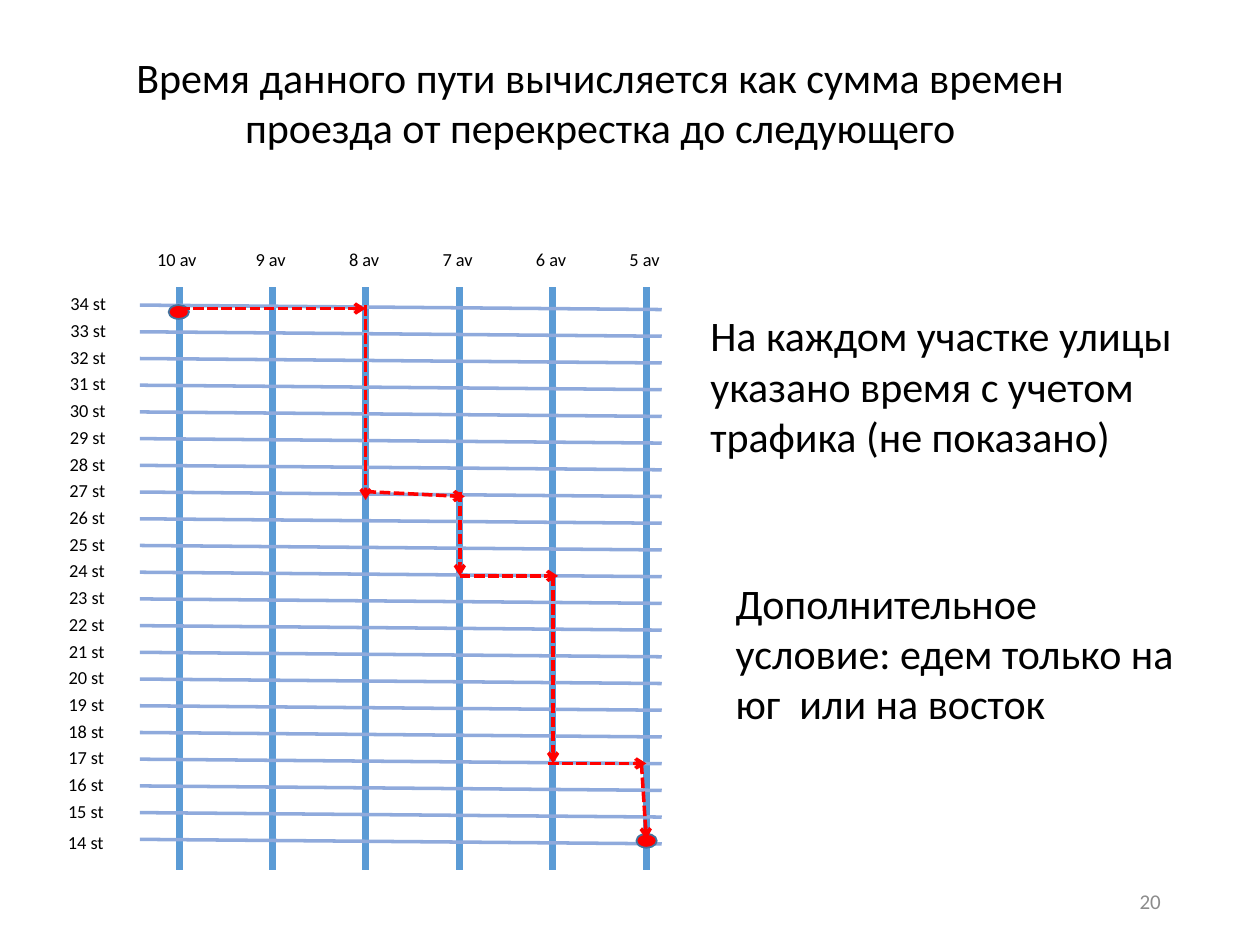
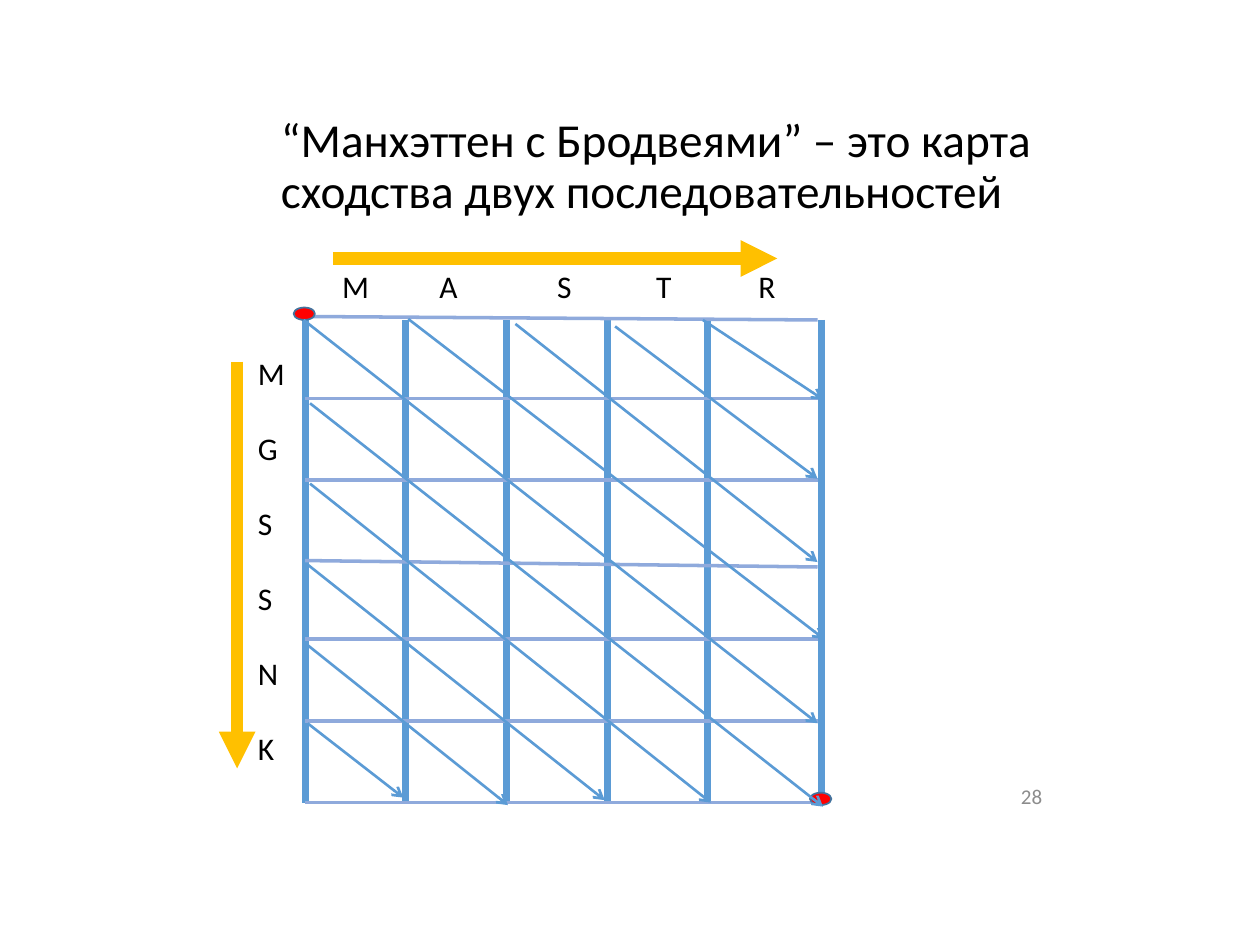
"""Build two slides that show street grids with routes through them."""
import pptx
import pptx.dml.color
import pptx.enum.dml
import pptx.enum.shapes
import pptx.enum.text
import pptx.oxml
import pptx.oxml.ns
import pptx.util

Cm, Pt = pptx.util.Cm, pptx.util.Pt
ALIGN = pptx.enum.text.PP_ALIGN
ANCHOR = pptx.enum.text.MSO_ANCHOR
FONT = "Calibri"
COLORS = {
    "text": "000000",
    "number": "8C8C8C",
    "avenue": "5B9BD5",
    "street": "8FAADC",
    "route": "FF0000",
    "outline": "43739E",
    "direction": "FFC000",
}
ROUTE = [
    (11.05, 15.39, 13.03, 15.39),
    (12.93, 15.39, 13.03, 16.92),
    (9.27, 11.61, 11.25, 11.61),
    (11.15, 11.61, 11.15, 15.39),
    (9.27, 9.91, 9.27, 11.61),
    (7.37, 9.91, 9.37, 10.01),
    (7.37, 6.15, 7.37, 10.08),
    (3.61, 6.22, 7.37, 6.22),
]
DIAGONALS = [
    (6.12, 6.45, 16.48, 14.58),
    (6.25, 8.13, 16.59, 16.26),
    (6.25, 9.75, 14.33, 16.18),
    (6.2, 11.38, 12.19, 16.13),
    (10.39, 6.53, 16.48, 11.33),
    (6.17, 12.98, 10.24, 16.23),
    (12.4, 6.58, 16.48, 9.65),
    (14.17, 6.45, 16.59, 8.05),
    (6.2, 14.58, 8.13, 16.08),
    (8.23, 6.43, 16.61, 12.88),
]


def rgb(name):
    return pptx.dml.color.RGBColor.from_string(COLORS[name])


def add_xml(parent, tag, **attrs):
    child = pptx.oxml.parse_xml(f"<a:{tag} {pptx.oxml.ns.nsdecls('a')}/>")
    for key, value in attrs.items():
        child.set(key, str(value))
    parent.append(child)
    return child


def format_paragraph(p, size, color="text", align=ALIGN.LEFT):
    p.alignment = align
    p.font.name = FONT
    p.font.size = Pt(size)
    p.font.color.rgb = rgb(color)


def add_text(slide, box, text, size, color="text", align=ALIGN.LEFT,
             anchor=ANCHOR.TOP, wrap=True):
    sp = slide.shapes.add_textbox(*map(Cm, box))
    tf = sp.text_frame
    tf.word_wrap = wrap
    tf.vertical_anchor = anchor
    tf.text = text
    for p in tf.paragraphs:
        format_paragraph(p, size, color, align)
    return tf


def add_title(slide, box, text, size, align, anchor, spacing):
    sp = slide.shapes.title
    sp.left, sp.top, sp.width, sp.height = map(Cm, box)
    tf = sp.text_frame
    tf.text = text
    tf.word_wrap = True
    tf.auto_size = pptx.enum.text.MSO_AUTO_SIZE.NONE
    tf.vertical_anchor = anchor
    p = tf.paragraphs[0]
    p.line_spacing = spacing
    format_paragraph(p, size, align=align)


def add_number(slide, box, number):
    add_text(slide, box, number, 12, "number", ALIGN.RIGHT, ANCHOR.MIDDLE)


def add_line(slide, ends, color, width, dashed=False, head=None):
    line = slide.shapes.add_connector(
        pptx.enum.shapes.MSO_CONNECTOR.STRAIGHT, *map(Cm, ends))
    line.line.color.rgb = rgb(color)
    line.line.width = Pt(width)
    if dashed:
        line.line.dash_style = pptx.enum.dml.MSO_LINE.SQUARE_DOT
    if head:
        add_xml(line.line._get_or_add_ln(), "tailEnd", type=head)
    add_xml(line._element.spPr, "effectLst")


def add_stop(slide, left, top, width, height):
    sp = slide.shapes.add_shape(
        pptx.enum.shapes.MSO_SHAPE.OVAL, *map(Cm, (left, top, width, height)))
    sp.shadow.inherit = False
    sp.fill.solid()
    sp.fill.fore_color.rgb = rgb("route")
    sp.line.color.rgb = rgb("outline")
    sp.line.width = Pt(1)


def add_tabs(p, positions):
    pPr = p._p.get_or_add_pPr()
    tabs = add_xml(pPr, "tabLst")
    for position in positions:
        add_xml(tabs, "tab", pos=Cm(position), algn="l")
    pPr.insert(0, tabs)


def build_street_map(slide):
    add_title(slide, (1.85, 0.91, 20.5, 2.31),
              "Время данного пути вычисляется как сумма времен проезда "
              "от перекрестка до следующего", 24, ALIGN.CENTER, ANCHOR.TOP, 1.0)
    avenue_gap = (13.03 - 3.61) / 5
    street_gap = (16.92 - 6.15) / 20
    for i in range(6):
        x = 3.61 + i * avenue_gap
        label = f"{10 - i} av"
        add_line(slide, (x, 5.79, x, 17.53), "avenue", 4)
        add_text(slide, (x - 0.19 - 0.1 * len(label), 4.88,
                         0.4 + 0.25 * len(label), 0.79),
                 label, 10.5, wrap=False)
    for i in range(21):
        y = 6.15 + i * street_gap
        label_top = y - 0.38 + (0.1 if i == 20 else 0)
        add_line(slide, (2.82, y, 13.34, y + 0.09), "street", 2)
        add_text(slide, (1.17 - 0.05 * i / 20, label_top, 1.55, 0.79),
                 f"{34 - i} st", 10.5, wrap=False)
    add_stop(slide, 3.4, 6.15, 0.41, 0.28)
    add_stop(slide, 12.83, 16.81, 0.41, 0.28)
    for ends in ROUTE:
        add_line(slide, ends, "route", 2, dashed=True, head="arrow")
    add_text(slide, (14.07, 6.12, 10.57, 3.33),
             "На каждом участке улицы указано время с учетом трафика "
             "(не показано)", 24)
    add_text(slide, (14.58, 11.51, 9.78, 3.33),
             "Дополнительное условие: едем только на юг  или на восток", 24)
    add_number(slide, (17.93, 17.65, 5.72, 1.02), "20")


def build_similarity_map(slide):
    add_title(slide, (5.41, 2.18, 15.88, 2.39),
              "“Манхэттен с Бродвеями” – это карта сходства двух "
              "последовательностей", 27, ALIGN.LEFT, ANCHOR.MIDDLE, 0.9)
    add_number(slide, (16.81, 15.67, 4.45, 0.76), "28")
    for x in [6.15 + 2.03 * i for i in range(5)]:
        add_line(slide, (x, 6.45, x, 16.18), "avenue", 4)
    add_line(slide, (16.56, 6.45, 16.56, 15.98), "avenue", 4)
    for y, drop in ((6.38, 0.07), (8.03, 0), (9.68, 0), (11.3, 0.13),
                    (12.88, 0), (14.53, 0), (16.18, 0)):
        add_line(slide, (6.15, y, 16.48, y + drop), "street", 2)
    add_stop(slide, 5.92, 6.2, 0.43, 0.25)
    add_stop(slide, 16.33, 15.98, 0.43, 0.25)
    tf = add_text(slide, (6.65, 5.26, 9.45, 1.02), "\t".join("MASTR"), 18)
    add_tabs(tf.paragraphs[0], (1.96, 4.33, 6.33, 8.39))
    tf = add_text(slide, (4.95, 7.01, 0.99, 8.71), "\n".join("MGSSNK"), 18,
                  wrap=False)
    for p in tf.paragraphs:
        p.space_after = Pt(21.3)
    for ends in DIAGONALS:
        add_line(slide, ends, "avenue", 1.5, head="arrow")
    for ends in ((4.78, 7.29, 4.78, 15.49), (6.71, 5.21, 15.67, 5.21)):
        add_line(slide, ends, "direction", 7, head="triangle")


def main():
    prs = pptx.Presentation()
    prs.slide_width, prs.slide_height = Cm(25.4), Cm(19.05)
    layout = prs.slide_layouts[5]
    for build in (build_street_map, build_similarity_map):
        build(prs.slides.add_slide(layout))
    prs.save("out.pptx")


if __name__ == "__main__":
    main()
